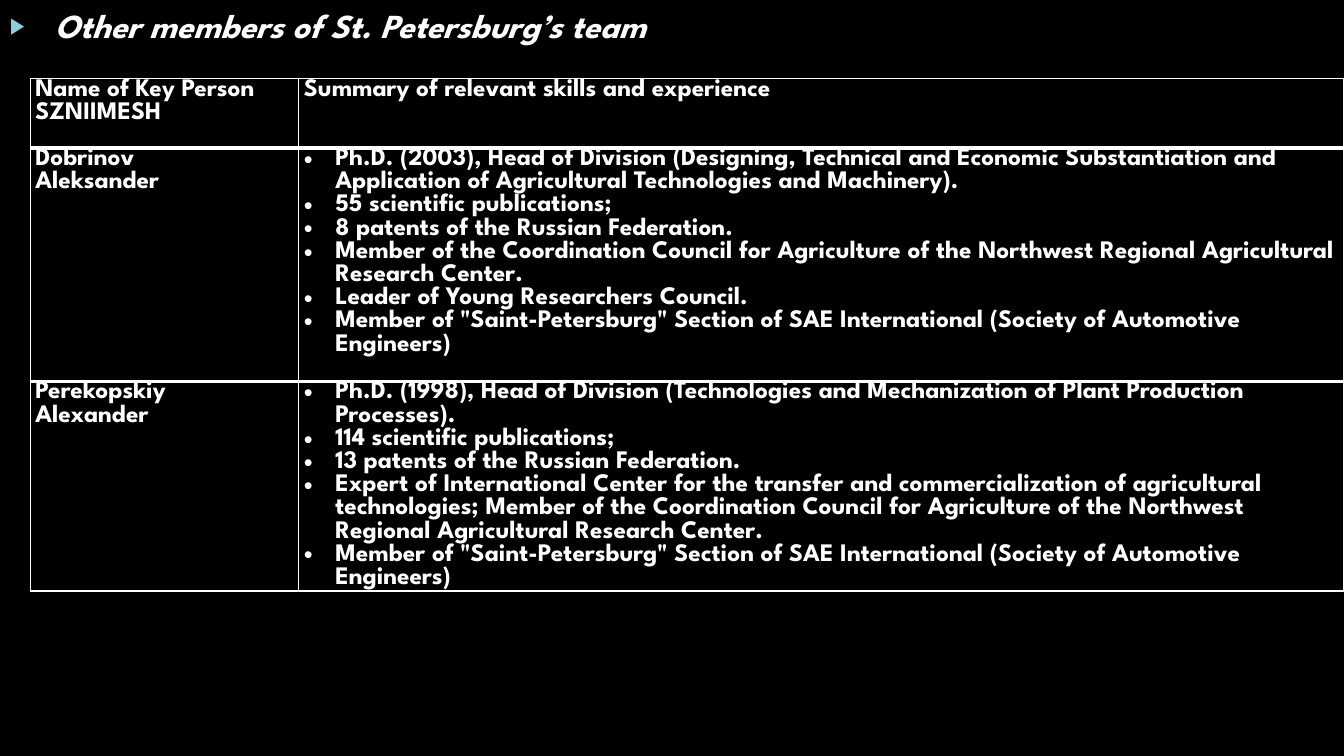
from lxml import etree
from pptx import Presentation
from pptx import util as u
from pptx.dml import color
from pptx.enum import text
from pptx.oxml import ns

WHITE = "FFFFFF"
BLACK = "000000"
TEAL = "8AD0D6"
FONT = "League Spartan"
TITLE = "Other members of St. Petersburg’s team"
SECTION = 'Member of "Saint-Petersburg" Section of SAE International (Society of Automotive Engineers)'
HEADER = (["Name of Key Person", "SZNIIMESH"], ["Summary of relevant skills and experience"])
MEMBERS = [
    (["Dobrinov", "Aleksander"], [
        "Ph.D. (2003), Head of Division (Designing, Technical and Economic Substantiation and "
        "Application of Agricultural Technologies and Machinery).",
        "55 scientific publications;",
        "8 patents of the Russian Federation.",
        "Member of the Coordination Council for Agriculture of the Northwest Regional "
        "Agricultural Research Center.",
        "Leader of Young Researchers Council.",
        SECTION,
    ]),
    (["Perekopskiy", "Alexander"], [
        "Ph.D. (1998), Head of Division (Technologies and Mechanization of Plant Production "
        "Processes).",
        "114 scientific publications;",
        "13 patents of the Russian Federation.",
        "Expert of International Center for the transfer and commercialization of agricultural "
        "technologies; Member of the Coordination Council for Agriculture of the Northwest "
        "Regional Agricultural Research Center.",
        SECTION,
    ]),
]
COLUMN_WIDTHS = (6.77, 26.34)
ROW_HEIGHTS = (1.75, 5.88, 5.28)
LINE_PITCH = 16.56
THIN, THICK = 1, 3


def rgb(value):
    """Return the colour for a hex string."""
    return color.RGBColor.from_string(value)


def apply(target, values):
    """Set each named attribute on the target."""
    for name, value in values.items():
        setattr(target, name, value)


def add_element(parent, tag, **attributes):
    """Append a drawing element and return it."""
    return etree.SubElement(parent, ns.qn(tag), attributes)


def add_bullet(para, mark, indent, hue, percent):
    """Give a paragraph a hanging bullet."""
    props = para._p.get_or_add_pPr()
    props.set("marL", str(u.Cm(indent)))
    props.set("indent", str(-u.Cm(indent)))
    add_element(add_element(props, "a:buClr"), "a:srgbClr", val=hue)
    add_element(props, "a:buSzPct", val=str(percent * 1000))
    add_element(props, "a:buFont", typeface="Arial")
    add_element(props, "a:buChar", char=mark)


def write(para, words, size, **extra):
    """Write one bold white span in a paragraph."""
    span = para.add_run()
    span.text = words
    apply(span.font, {"name": FONT, "size": u.Pt(size), "bold": True, **extra})
    span.font.color.rgb = rgb(WHITE)


def add_border(cell, row, last):
    """Draw cell edges, thick between rows and thin elsewhere."""
    widths = {
        "a:lnL": THIN,
        "a:lnR": THIN,
        "a:lnT": THICK if row > 0 else THIN,
        "a:lnB": THICK if row < last else THIN,
    }
    props = cell._tc.get_or_add_tcPr()
    for tag, width in widths.items():
        line = add_element(props, tag, w=str(u.Pt(width)))
        add_element(add_element(line, "a:solidFill"), "a:srgbClr", val=WHITE)


def add_title(page, left, top, width, height):
    """Place the bulleted slide heading in the given box."""
    box = page.shapes.add_textbox(u.Cm(left), u.Cm(top), u.Cm(width), u.Cm(height))
    frame = box.text_frame
    apply(frame, {
        "word_wrap": True,
        "vertical_anchor": text.MSO_ANCHOR.TOP,
        "margin_left": u.Cm(0.25),
        "margin_top": u.Cm(0.13),
    })
    para = frame.paragraphs[0]
    add_bullet(para, "▶", 1.13, TEAL, 67)
    write(para, TITLE, 24, italic=True)


def fill_cell(cell, lines, bulleted):
    """Write the lines of a cell, one paragraph each."""
    apply(cell, {
        "margin_left": u.Cm(0.13),
        "margin_right": u.Cm(0.13),
        "margin_top": 0,
        "margin_bottom": 0,
    })
    frame = cell.text_frame
    for index, words in enumerate(lines):
        para = frame.add_paragraph() if index else frame.paragraphs[0]
        if bulleted:
            add_bullet(para, "•", 0.79, WHITE, 100)
        para.line_spacing = u.Pt(LINE_PITCH)
        write(para, words, 18)


def add_team_table(page, left, top):
    """Place the table of team members with its corner at the given point."""
    rows = [HEADER, *MEMBERS]
    frame = page.shapes.add_table(
        len(rows), len(COLUMN_WIDTHS), u.Cm(left), u.Cm(top),
        u.Cm(sum(COLUMN_WIDTHS)), u.Cm(sum(ROW_HEIGHTS)))
    table = frame.table
    apply(table, {"first_row": False, "horz_banding": False})
    for column, width in zip(table.columns, COLUMN_WIDTHS):
        column.width = u.Cm(width)
    for row, (height, cells) in enumerate(zip(ROW_HEIGHTS, rows)):
        table.rows[row].height = u.Cm(height)
        for column, lines in enumerate(cells):
            cell = table.cell(row, column)
            fill_cell(cell, lines, row > 0 and column == 1)
            add_border(cell, row, len(rows) - 1)
            cell.fill.background()


def main():
    """Build and save the team slide."""
    deck = Presentation()
    apply(deck, {"slide_width": u.Cm(33.87), "slide_height": u.Cm(19.05)})
    page = deck.slides.add_slide(deck.slide_layouts[6])
    page.background.fill.solid()
    page.background.fill.fore_color.rgb = rgb(BLACK)
    add_title(page, 0, 0, 33.87, 1.9)
    add_team_table(page, 0.76, 1.98)
    deck.save("out.pptx")


if __name__ == "__main__":
    main()
